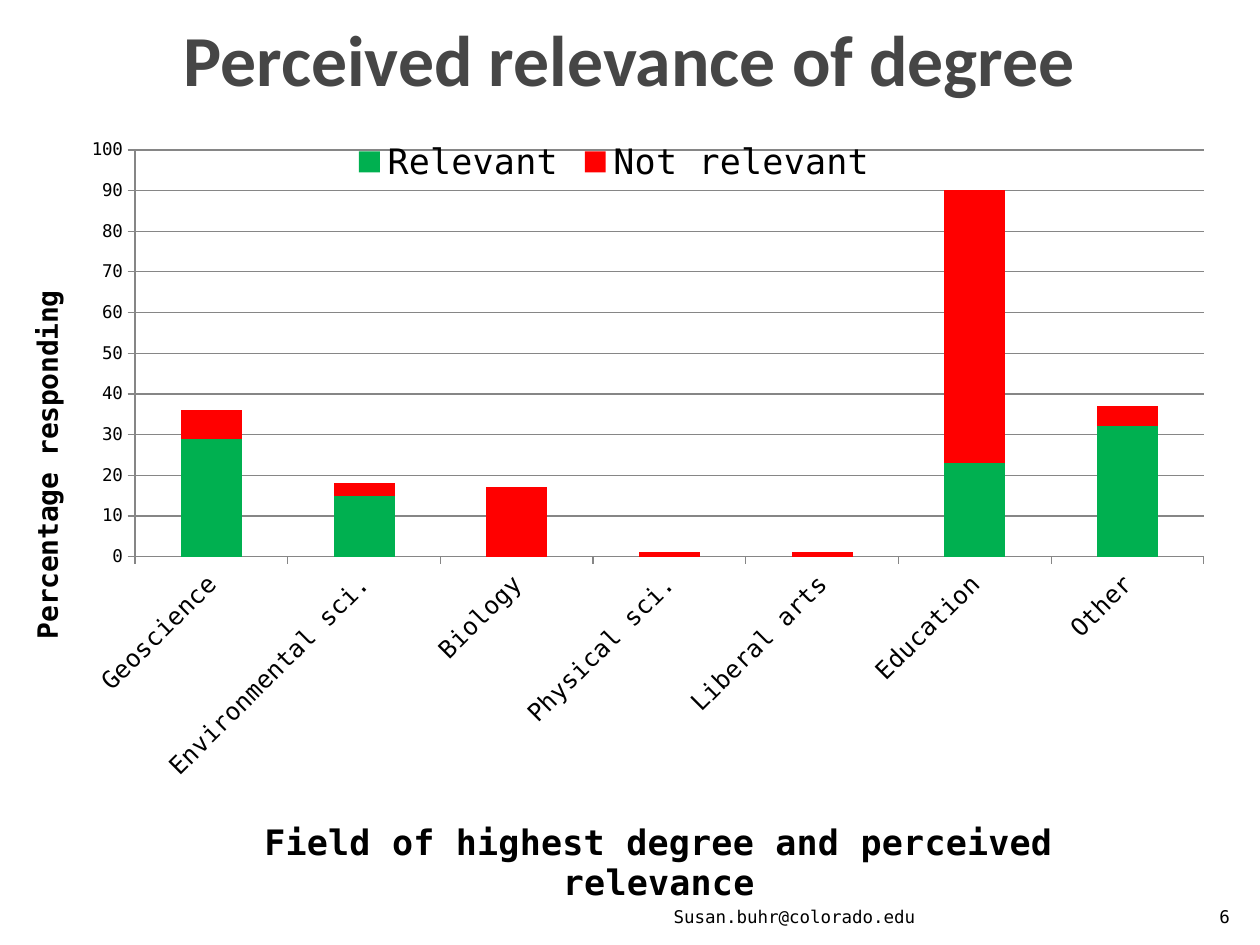
"""Build a slide with a stacked column chart of perceived degree relevance."""
from lxml.etree import SubElement
from pptx import Presentation
from pptx.chart.data import CategoryChartData
from pptx.dml.color import RGBColor
from pptx.enum.chart import XL_CHART_TYPE as Kind, XL_LEGEND_POSITION as Spot, XL_TICK_MARK as Tick
from pptx.enum.text import MSO_ANCHOR as Anchor, PP_ALIGN as Align
from pptx.oxml.ns import qn
from pptx.util import Inches, Pt

MONO = "DejaVu Sans Mono"
BLACK = RGBColor(0, 0, 0)
DARK = RGBColor(0x46, 0x46, 0x46)
GRAY = RGBColor(0x86, 0x86, 0x86)
GREEN = RGBColor(0, 0xB0, 0x50)
RED = RGBColor(0xFF, 0, 0)


def style(font, size, name=MONO, color=BLACK, bold=False):
    font.size, font.name, font.bold = Pt(size), name, bold
    font.color.rgb = color


def place(node, index, **rules):
    for old in node.findall(qn("c:layout")):
        node.remove(old)
    layout = SubElement(node, qn("c:layout"))
    node.insert(index, layout)
    manual = SubElement(layout, qn("c:manualLayout"))
    for tag, value in rules.items():
        SubElement(manual, qn(f"c:{tag}")).set("val", str(value))


deck = Presentation()
deck.slide_width, deck.slide_height = Inches(10), Inches(7.5)
slide = deck.slides.add_slide(deck.slide_layouts[5])

title = slide.shapes.title
title.left, title.top = Inches(0.5), Inches(-0.17)
title.width, title.height = Inches(9), Inches(1.25)
title.text_frame.vertical_anchor = Anchor.MIDDLE
para = title.text_frame.paragraphs[0]
para.alignment = Align.CENTER
run = para.add_run()
run.text = "Perceived relevance of degree"
style(run.font, 41, "Calibri", DARK, True)

data = CategoryChartData(number_format="0")
data.categories = ["Geoscience", "Environmental sci.", "Biology", "Physical sci.",
                   "Liberal arts", "Education", "Other"]
data.add_series("Relevant", [29, 15, 0, 0, 0, 23, 32])
data.add_series("Not relevant", [7, 3, 17, 1, 1, 67, 5])
frame = slide.shapes.add_chart(Kind.COLUMN_STACKED, Inches(0), Inches(1),
                               Inches(9.75), Inches(6.33), data)
chart = frame.chart
chart.has_title = False
style(chart.font, 10)

plot = chart.plots[0]
plot.gap_width, plot.overlap = 150, 100
plot.vary_by_categories = False
for series, color in zip(plot.series, (GREEN, RED)):
    series.format.fill.solid()
    series.format.fill.fore_color.rgb = color
    series.invert_if_negative = False

fields, scale = chart.category_axis, chart.value_axis
for axis, label, size, tick, left, top in (
        (fields, "Field of highest degree and perceived relevance", 20, 14, 0.21, 0.86),
        (scale, "Percentage responding", 16, 10, 0.02, 0.2)):
    axis.major_tick_mark = Tick.OUTSIDE
    axis.minor_tick_mark = Tick.NONE
    axis.format.line.color.rgb = GRAY
    style(axis.tick_labels.font, tick)
    run = axis.axis_title.text_frame.paragraphs[0].add_run()
    run.text = label
    style(run.font, size, bold=True)
    place(axis.axis_title._element, 1, xMode="edge", yMode="edge", x=left, y=top)

fields.tick_labels.font._element.getparent().getparent().getparent().find(
    qn("a:bodyPr")).set("rot", "-2700000")
turn = scale.axis_title.text_frame._txBody.find(qn("a:bodyPr"))
turn.set("rot", "-5400000")
turn.set("vert", "horz")
scale.minimum_scale, scale.maximum_scale, scale.major_unit = 0, 100, 10
scale.tick_labels.number_format = "0"
scale.tick_labels.number_format_is_linked = False
scale.has_major_gridlines = True
scale.major_gridlines.format.line.color.rgb = GRAY

chart.has_legend = True
legend = chart.legend
legend.position = Spot.TOP
legend.include_in_layout = True
style(legend.font, 20)
place(legend._element, 1, xMode="edge", yMode="edge", x=0.28, y=0.01, w=0.44, h=0.07)
place(chart._chartSpace.chart.plotArea, 0, layoutTarget="inner", xMode="edge",
      yMode="edge", x=0.11, y=0.03, w=0.87, h=0.51)

for words, left, width in (("6", 9.46, 0.4), ("Susan.buhr@colorado.edu", 4.79, 2.57)):
    box = slide.shapes.add_textbox(Inches(left), Inches(7.01), Inches(width), Inches(0.4))
    box.text_frame.word_wrap = True
    box.text_frame.vertical_anchor = Anchor.BOTTOM
    para = box.text_frame.paragraphs[0]
    para.alignment = Align.RIGHT
    run = para.add_run()
    run.text = words
    style(run.font, 10)

deck.save("out.pptx")
